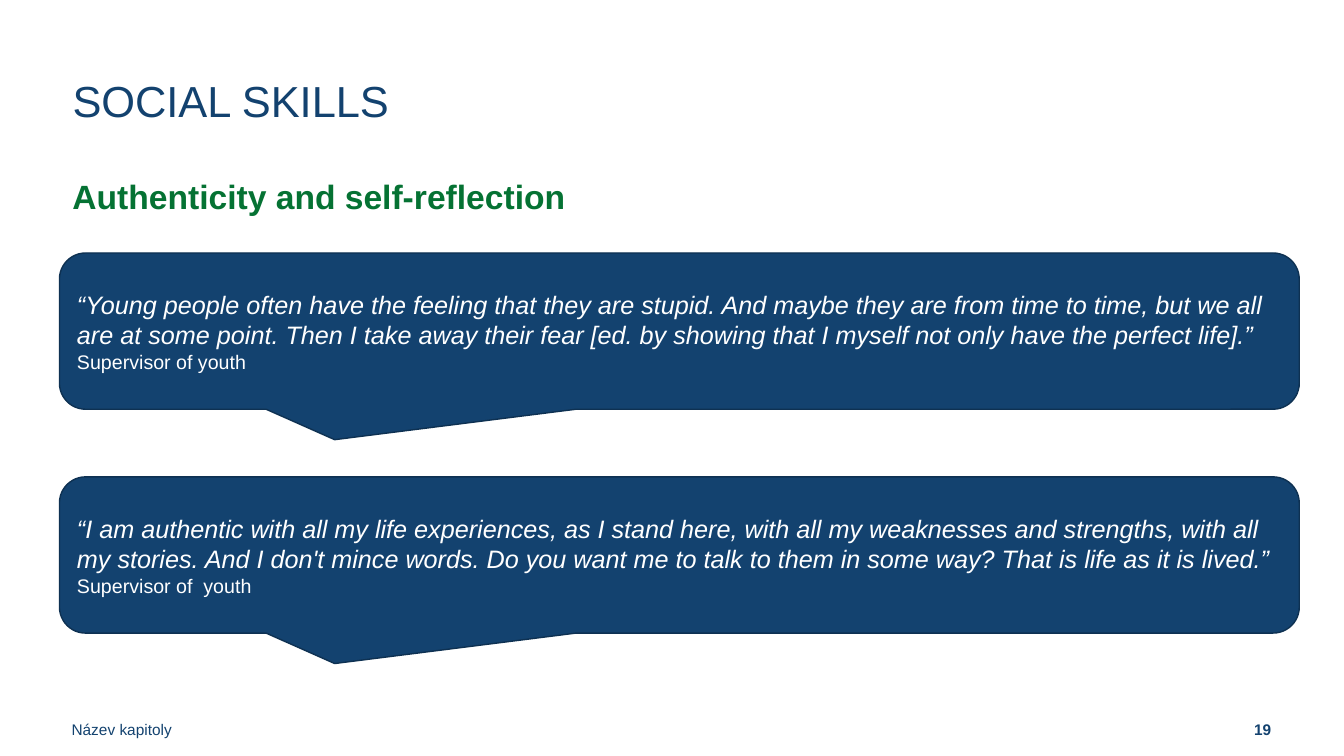
"""Build the social skills slide with two quotes in callouts."""
from pptx import Presentation
from pptx.dml.color import RGBColor
from pptx.enum.shapes import MSO_SHAPE
from pptx.enum.text import MSO_ANCHOR, MSO_AUTO_SIZE, PP_ALIGN
from pptx.util import Pt

CALLOUT = MSO_SHAPE.ROUNDED_RECTANGULAR_CALLOUT
TOP, MIDDLE, BOTTOM = MSO_ANCHOR.TOP, MSO_ANCHOR.MIDDLE, MSO_ANCHOR.BOTTOM
LEFT, RIGHT = PP_ALIGN.LEFT, PP_ALIGN.RIGHT
FIXED = MSO_AUTO_SIZE.NONE
COLORS = {"navy": "13426F", "edge": "0E3152", "green": "057233", "white": "FFFFFF"}


def set_frame(shape, anchor, insets):
    frame = shape.text_frame
    frame.auto_size = FIXED
    frame.word_wrap = True
    frame.vertical_anchor = anchor
    frame.margin_left, frame.margin_top, frame.margin_right, frame.margin_bottom = map(Pt, insets)
    return frame


def add_text(para, text, size, color, align=LEFT, bold=False, italic=False):
    para.alignment = align
    run = para.add_run()
    run.text = text
    font = run.font
    font.name = "Arial"
    font.size = Pt(size)
    font.bold = bold
    font.italic = italic
    font.color.rgb = RGBColor.from_string(COLORS[color])


deck = Presentation()
deck.slide_width, deck.slide_height = Pt(960), Pt(540)
slide = deck.slides.add_slide(deck.slide_layouts[5])
shapes = slide.shapes

footers = [
    ("Název kapitoly", 0, 324, LEFT, False, (51.1, 3.6, 0, 11.5)),
    ("19", 743.2, 216, RIGHT, True, (0, 3.6, 51.1, 11.5)),
]
for text, left, width, align, bold, insets in footers:
    box = shapes.add_textbox(Pt(left), Pt(496.2), Pt(width), Pt(43.2))
    para = set_frame(box, BOTTOM, insets).paragraphs[0]
    para.line_spacing = Pt(13.3)
    add_text(para, text, 11, "navy", align, bold)

title = shapes.title
title.left, title.top, title.width, title.height = Pt(51.8), Pt(52.6), Pt(885.6), Pt(80.6)
para = set_frame(title, TOP, (0, 3.6, 7.2, 3.6)).paragraphs[0]
para.line_spacing = Pt(34)
add_text(para, "SOCIAL SKILLS", 31, "navy")

body = shapes.add_textbox(Pt(51.8), Pt(120.2), Pt(885.6), Pt(161.3))
para = set_frame(body, TOP, (0, 3.6, 7.2, 3.6)).paragraphs[0]
para.line_spacing = 1.07
para.space_after = Pt(8)
add_text(para, "Authenticity and self-reflection", 24, "green", bold=True)

quotes = [
    (180.7, "“Young people often have the feeling that they are stupid. And maybe they are "
     "from time to time, but we all are at some point. Then I take away their fear [ed. by "
     "showing that I myself not only have the perfect life].”", "Supervisor of youth"),
    (340.6, "“I am authentic with all my life experiences, as I stand here, with all my "
     "weaknesses and strengths, with all my stories. And I don't mince words. Do you want me "
     "to talk to them in some way? That is life as it is lived.”", "Supervisor of  youth"),
]
for top, quote, source in quotes:
    bubble = shapes.add_shape(CALLOUT, Pt(42.5), Pt(top), Pt(885.6), Pt(111.6))
    bubble.shadow.inherit = False
    for index, value in enumerate((-0.278, 0.695, 0.167)):
        bubble.adjustments[index] = value
    bubble.fill.solid()
    bubble.fill.fore_color.rgb = RGBColor.from_string(COLORS["navy"])
    bubble.line.color.rgb = RGBColor.from_string(COLORS["edge"])
    bubble.line.width = Pt(1)
    frame = set_frame(bubble, MIDDLE, (7.2, 3.6, 7.2, 3.6))
    add_text(frame.paragraphs[0], quote, 18, "white", italic=True)
    add_text(frame.add_paragraph(), source, 14, "white")

deck.save("out.pptx")
